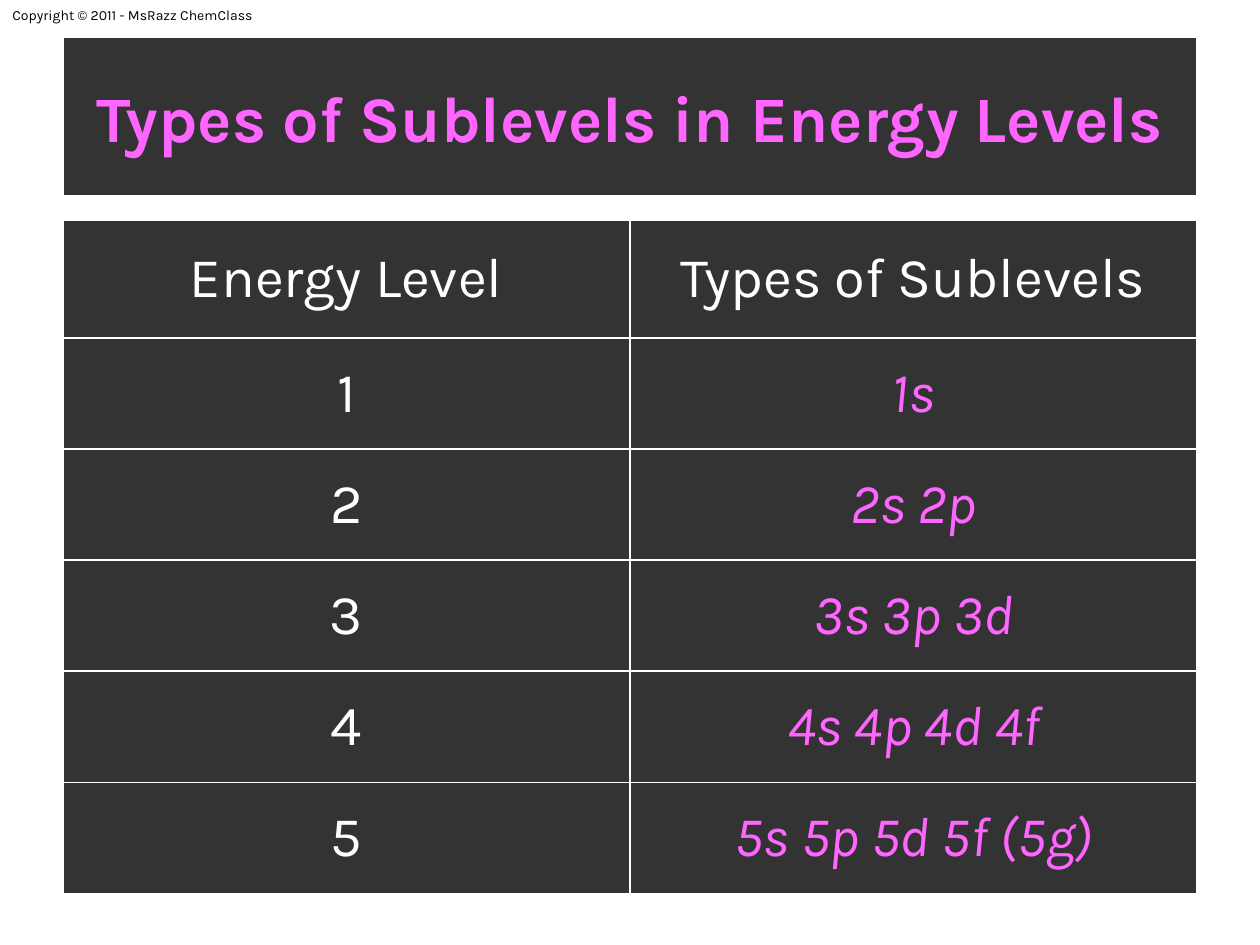
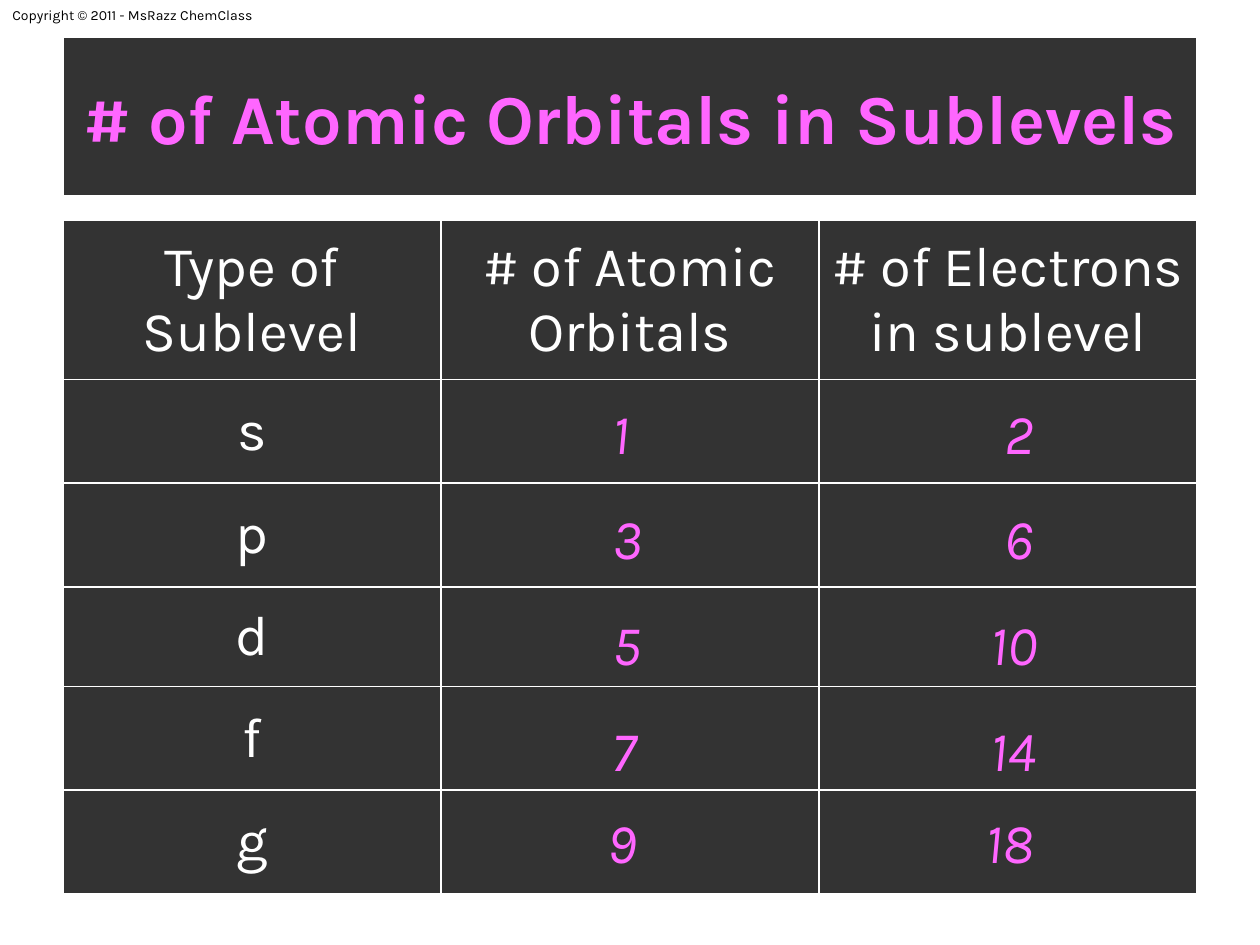
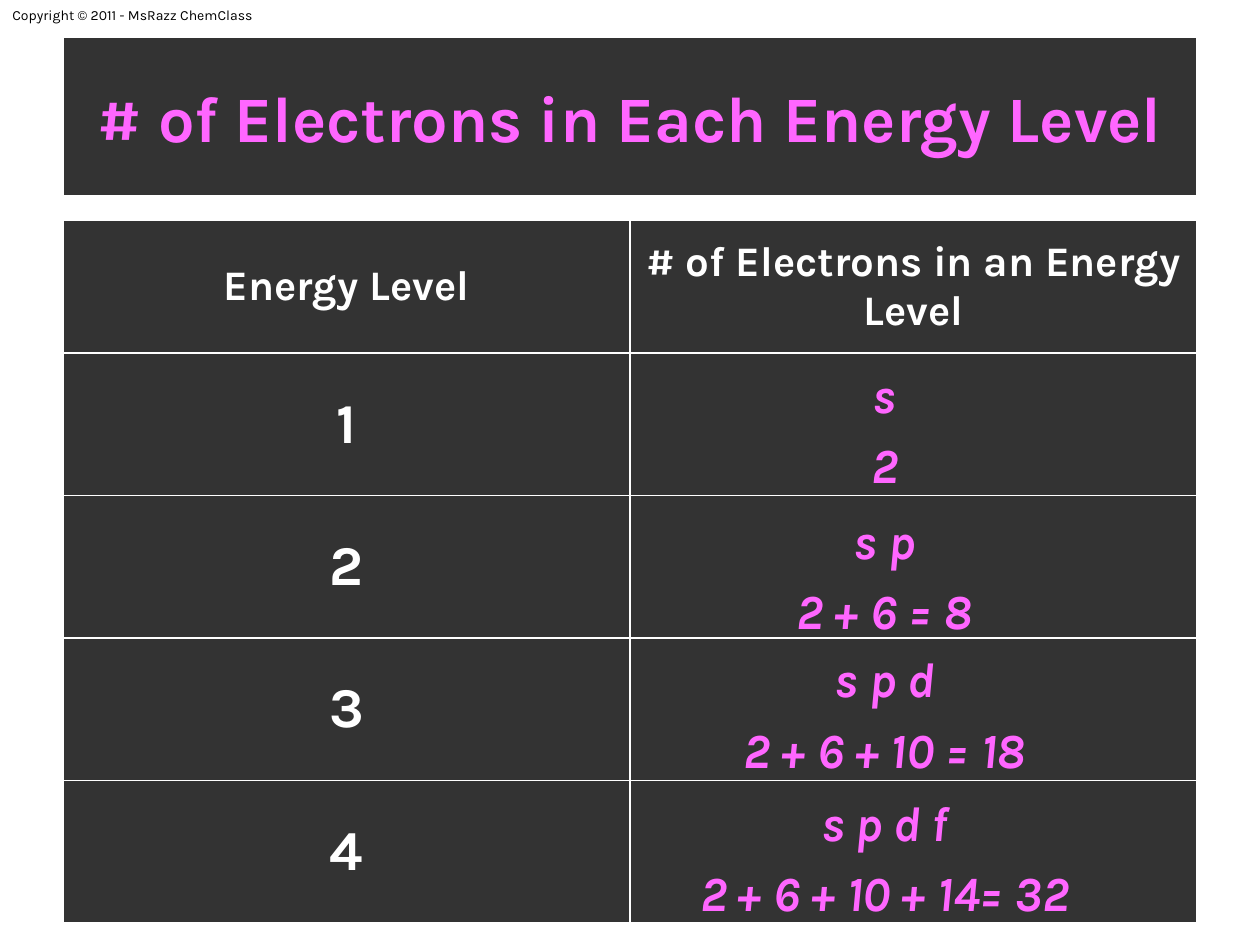
from lxml.etree import SubElement
from pptx import Presentation
from pptx.dml.color import RGBColor
from pptx.enum.shapes import MSO_SHAPE as Preset
from pptx.enum.text import MSO_ANCHOR as Anchor, MSO_AUTO_SIZE as AutoSize, PP_ALIGN as Align
from pptx.oxml import parse_xml
from pptx.oxml.ns import nsdecls, qn
from pptx.util import Cm, Pt

BLACK = RGBColor(0x00, 0x00, 0x00)
WHITE = RGBColor(0xFF, 0xFF, 0xFF)
PINK = RGBColor(0xFF, 0x66, 0xFF)

FONT = "Karla"
LEFT, WIDTH = 1.27, 22.86
OPACITY = 80

PLAIN = {"size": Pt(32), "bold": False, "color": WHITE}
ANSWER = {**PLAIN, "italic": True, "color": PINK}
STRONG = {**PLAIN, "bold": True}
STRONG_HEAD = {**STRONG, "size": Pt(24)}
SUM = {**ANSWER, "size": Pt(28), "bold": True}
NOTICE = {"size": Pt(8), "color": BLACK}


class ChemDeck:
    """Holds the shared style of the deck and the page being filled."""

    def __init__(self):
        self.deck = Presentation()
        self.deck.slide_width, self.deck.slide_height = Cm(25.4), Cm(19.05)
        self.page = None

    def add_lines(self, frame, lines, style, align=Align.CENTER, gap=Pt(6.5)):
        """Add one paragraph for each line."""
        for index, line in enumerate(lines):
            para = frame.add_paragraph() if index else frame.paragraphs[0]
            para.alignment = align
            if index:
                para.space_before = gap
            span = para.add_run()
            span.text = line
            span.font.name = FONT
            for name, value in style.items():
                if name == "color":
                    span.font.color.rgb = value
                else:
                    setattr(span.font, name, value)

    def tint(self, owner, properties):
        """Give a shape or a cell the translucent black fill."""
        owner.fill.solid()
        owner.fill.fore_color.rgb = BLACK
        color = properties.find(qn("a:solidFill")).find(qn("a:srgbClr"))
        SubElement(color, qn("a:alpha")).set("val", str(OPACITY * 1000))

    def text(self, left, top, width, height, lines, style, align=Align.LEFT, wrap=True, inset=0.13):
        """Add a text box that fits its text."""
        box = self.page.shapes.add_textbox(Cm(left), Cm(top), Cm(width), Cm(height))
        frame = box.text_frame
        frame.word_wrap = wrap
        frame.auto_size = AutoSize.SHAPE_TO_FIT_TEXT
        frame.margin_top = Cm(inset)
        self.add_lines(frame, lines, style, align)

    def start(self, title, size):
        """Add a page with its copyright line and title band."""
        self.page = self.deck.slides.add_slide(self.deck.slide_layouts[6])
        self.text(0, 0, 6.02, 0.61, ["Copyright © 2011 - MsRazz ChemClass"], NOTICE)
        band = self.page.shapes.add_shape(Preset.RECTANGLE, Cm(LEFT), Cm(0.76), Cm(WIDTH), Cm(3.18))
        band.shadow.inherit = False
        self.tint(band, band._element.spPr)
        band.line.color.rgb = WHITE
        band.line.width = Pt(0.75)
        band.text_frame.word_wrap = True
        band.text_frame.vertical_anchor = Anchor.MIDDLE
        self.add_lines(band.text_frame, [title], {"size": Pt(size), "bold": True, "color": PINK})

    def border(self, properties):
        """Draw a thin white line on each side of a cell."""
        for index, side in enumerate("LRTB"):
            properties.insert(index, parse_xml(
                f'<a:ln{side} {nsdecls("a")} w="{Pt(1)}"><a:solidFill>'
                f'<a:srgbClr val="{WHITE}"/></a:solidFill></a:ln{side}>'))

    def table(self, rows, heights, head=PLAIN, body=PLAIN):
        """Add a table with equal columns; later columns hold answers."""
        count = len(rows[0])
        holder = self.page.shapes.add_table(
            len(rows), count, Cm(LEFT), Cm(4.45), Cm(WIDTH), Cm(sum(heights)))
        table = holder.table
        table.first_row = table.horz_banding = False
        for column in table.columns:
            column.width = Cm(WIDTH / count)
        for r, (row, height) in enumerate(zip(rows, heights)):
            table.rows[r].height = Cm(height)
            for c in range(count):
                cell = table.cell(r, c)
                cell.vertical_anchor = Anchor.MIDDLE
                properties = cell._tc.get_or_add_tcPr()
                self.tint(cell, properties)
                self.border(properties)
                if c < len(row):
                    style = head if r == 0 else ANSWER if c else body
                    self.add_lines(cell.text_frame, [row[c]], style)


def sublevel_types(chem):
    """Build the page on types of sublevels."""
    chem.start("Types of Sublevels in Energy Levels", 37)
    chem.table([
        ("Energy Level", "Types of Sublevels"),
        ("1", "1s"),
        ("2", "2s 2p"),
        ("3", "3s 3p 3d"),
        ("4", "4s 4p 4d 4f"),
        ("5", "5s 5p 5d 5f (5g)"),
    ], [2.36] + [2.24] * 5)


def orbital_counts(chem):
    """Build the page on orbitals in each sublevel."""
    chem.start("# of Atomic Orbitals in Sublevels", 40)
    heads = ("Type of Sublevel", "# of Atomic Orbitals", "# of Electrons in sublevel")
    chem.table([heads, *"spdfg"], [3.2, 2.09, 2.09, 2.01, 2.09, 2.09])
    tops = [7.9 + 2.13 * step for step in range(4)] + [16.15]
    for level, top in enumerate(tops):
        orbitals = 2 * level + 1
        shift = 0.1 if level == 4 else 0
        for center, number in ((12.65, orbitals), (20.57, 2 * orbitals)):
            width = 1.12 if number < 10 else 1.7
            chem.text(center - shift - width / 2, top, width, 1.63, [str(number)], ANSWER, wrap=False)


def electron_counts(chem):
    """Build the page on electrons in each energy level."""
    chem.start("# of Electrons in Each Energy Level", 37)
    heads = ("Energy Level", "# of Electrons in an Energy Level")
    chem.table([heads, *"1234"], [2.67] + [2.87] * 4, STRONG_HEAD, STRONG)
    sums = [
        (7.11, 2.34, "s", "2"),
        (10.06, 12.7, "s p", "2 + 6 = 8"),
        (12.85, 12.7, "s p d", "2 + 6 + 10 = 18"),
        (15.75, 12.7, "s p d f", "2 + 6 + 10 + 14= 32"),
    ]
    for top, width, *lines in sums:
        chem.text(17.83 - width / 2, top, width, 2.9, lines, SUM, Align.CENTER, inset=0.23)


def main():
    """Build and save the deck."""
    chem = ChemDeck()
    for build in (sublevel_types, orbital_counts, electron_counts):
        build(chem)
    chem.deck.save("out.pptx")


if __name__ == "__main__":
    main()
